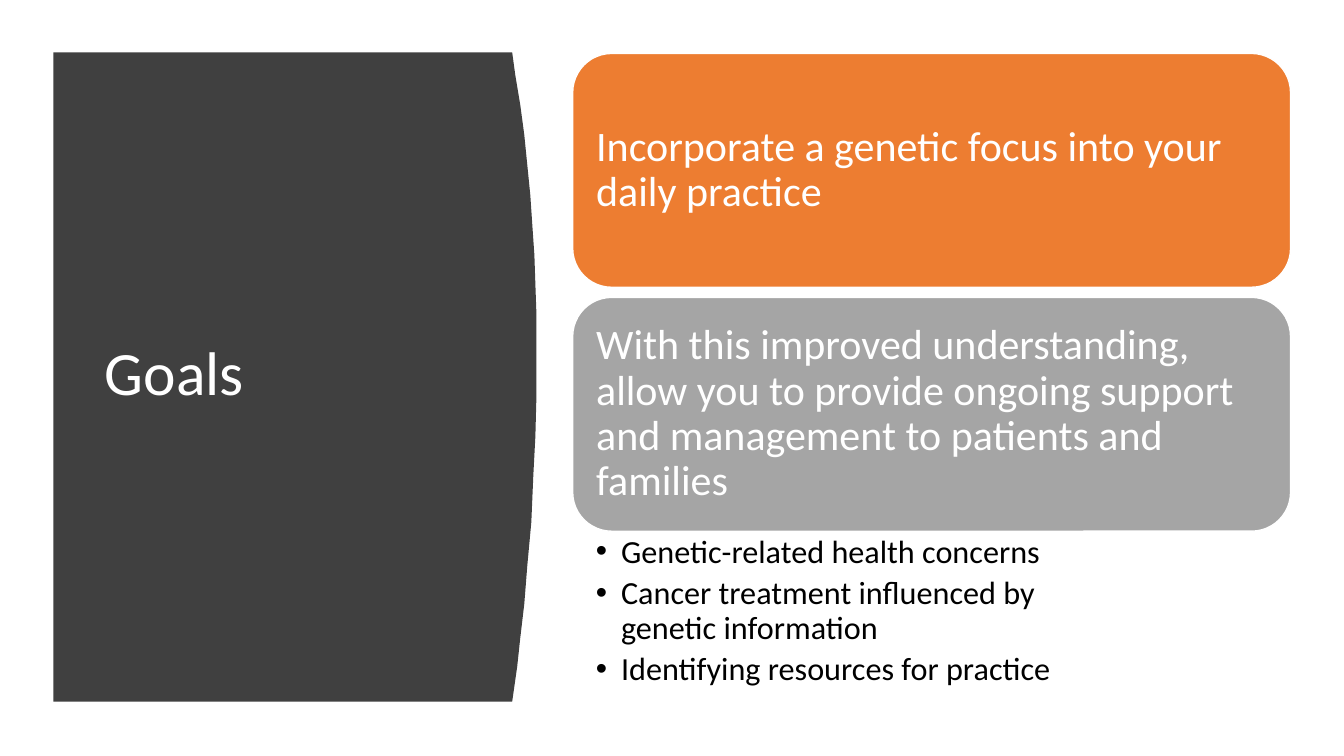
from pptx import Presentation
from pptx import util as u
from pptx.dml.color import RGBColor
from pptx.enum import shapes, text
from pptx.oxml.ns import qn
from lxml import etree

PX = 9144  # 100 px to the inch


def paint(fmt, color):
    fmt.solid()
    fmt.fore_color.rgb = RGBColor.from_string(color)


def write(para, words, size, color):
    para.alignment = text.PP_ALIGN.LEFT
    para.line_spacing = 0.9
    para.space_before = u.Pt(0)
    for i, part in enumerate(words.split("\n")):
        if i:
            para.add_line_break()
        run = para.add_run()
        run.text = part
        run.font.name = "Calibri"
        run.font.size = u.Pt(size)
        paint(run.font.fill, color)


prs = Presentation()
prs.slide_width, prs.slide_height = 1333 * PX, 750 * PX
slide = prs.slides.add_slide(prs.slide_layouts[1])
title, body = slide.shapes.title, slide.placeholders[1]

# Dark panel with a curved right edge
curve = [(508, 52), (511, 74), (516, 104), (520, 134), (523, 164),
         (526, 194), (528, 224), (530, 253), (531, 282), (532, 311),
         (532, 394), (531, 433), (529, 471), (527, 518), (523, 561),
         (520, 599), (516, 633), (513, 661), (510, 682), (508, 696)]
pen = slide.shapes.build_freeform(53, 52, scale=PX)
pen.add_line_segments(curve + [(53, 696)], close=True)
panel = pen.convert_to_shape()
panel.shadow.inherit = False
paint(panel.fill, "404040")
panel.line.fill.background()
title._element.addprevious(panel._element)

# Title
title.left, title.top, title.width, title.height = [n * PX for n in (94, 111, 374, 524)]
title.text_frame.auto_size = text.MSO_AUTO_SIZE.NONE
title.text_frame.vertical_anchor = text.MSO_ANCHOR.MIDDLE
write(title.text_frame.paragraphs[0], "Goals", 44, "FFFFFF")

# Goal cards
goals = [
    ("Incorporate a genetic focus into your daily practice", "ED7D31"),
    ("With this improved understanding, allow you to provide ongoing "
     "support and management to patients and families", "A5A5A5"),
]
for i, (words, color) in enumerate(goals):
    card = slide.shapes.add_shape(shapes.MSO_SHAPE.ROUNDED_RECTANGLE,
                                  568 * PX, (53 + 242 * i) * PX, 712 * PX, 232 * PX)
    card.shadow.inherit = False
    paint(card.fill, color)
    paint(card.line.fill, "FFFFFF")
    card.line.width = u.Pt(1)
    frame = card.text_frame
    frame.word_wrap = True
    frame.vertical_anchor = text.MSO_ANCHOR.MIDDLE
    frame.margin_left = frame.margin_right = 12 * PX
    frame.margin_top = frame.margin_bottom = 12 * PX
    write(frame.paragraphs[0], words, 30, "FFFFFF")

# Bulleted topics
body.left, body.top, body.width, body.height = [n * PX for n in (568, 527, 712, 166)]
frame = body.text_frame
frame.auto_size = text.MSO_AUTO_SIZE.NONE
frame.vertical_anchor = text.MSO_ANCHOR.TOP
frame.margin_left = frame.margin_right = 23 * PX
frame.margin_top = frame.margin_bottom = 4 * PX
topics = ["Genetic-related health concerns",
          "Cancer treatment influenced by\ngenetic information",
          "Identifying resources for practice"]
for i, topic in enumerate(topics):
    para = frame.add_paragraph() if i else frame.paragraphs[0]
    props = para._p.get_or_add_pPr()
    props.set("marL", str(25 * PX))
    props.set("indent", str(-25 * PX))
    etree.SubElement(props, qn("a:buChar")).set("char", "•")
    para.space_after = u.Pt(4.6)
    write(para, topic, 23, "000000")

prs.save("out.pptx")
